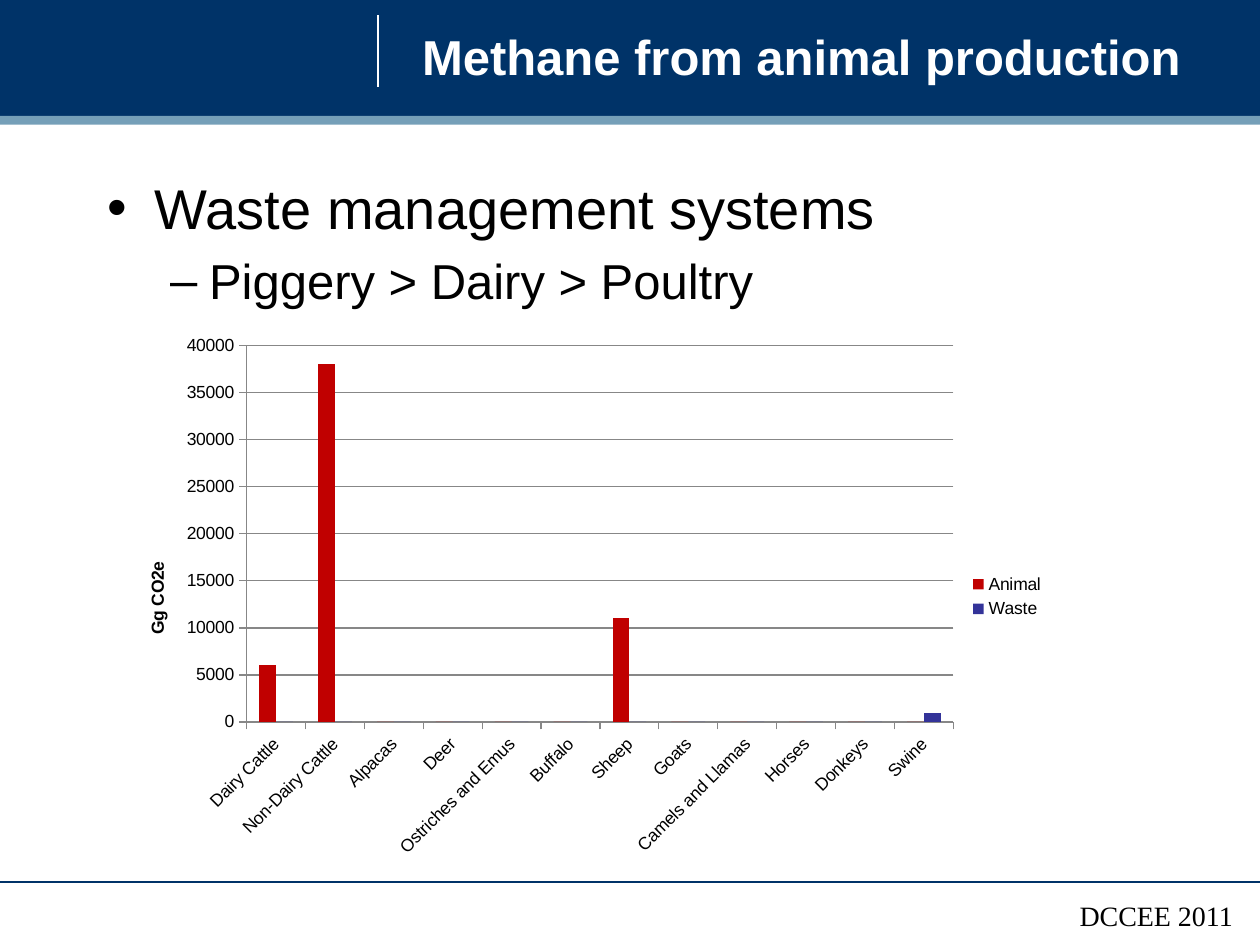
from lxml import etree
from pptx import Presentation
from pptx import util as u
from pptx.chart.data import CategoryChartData
from pptx.dml.color import RGBColor
from pptx.enum import chart as ch, shapes, text
from pptx.oxml import parse_xml
from pptx.oxml.ns import nsdecls, qn

NAVY, STEEL, WHITE, BLACK, GRID = "003368", "759FB8", "FFFFFF", "000000", "878787"


def rgb(value):
    return RGBColor.from_string(value)


class Deck:
    font = "Arial"

    def __init__(self, width, height):
        self.prs = Presentation()
        self.prs.slide_width, self.prs.slide_height = u.Inches(width), u.Inches(height)
        self.w, self.h = width, height
        self.s = self.prs.slides.add_slide(self.prs.slide_layouts[1])

    def box(self, x, y, w, h):
        return [u.Inches(round(v * size, 2))
                for v, size in zip((x, y, w, h), (self.w, self.h) * 2)]

    def place(self, sp, *share):
        sp.left, sp.top, sp.width, sp.height = self.box(*share)

    def run(self, p, words, size, color=BLACK, bold=False, font=None):
        r = p.add_run()
        r.text = words
        r.font.name, r.font.size, r.font.bold = font or self.font, u.Pt(size), bold
        r.font.color.rgb = rgb(color)

    def band(self, y, h, color):
        sp = self.s.shapes.add_shape(shapes.MSO_SHAPE.RECTANGLE, *self.box(0, y, 1, h))
        sp.shadow.inherit = False
        sp.fill.solid()
        sp.fill.fore_color.rgb = rgb(color)
        sp.line.fill.background()
        self.to_back(sp)

    def line(self, x1, y1, x2, y2, color):
        sp = self.s.shapes.add_connector(shapes.MSO_CONNECTOR.STRAIGHT, *self.box(x1, y1, x2, y2))
        sp.line.color.rgb, sp.line.width = rgb(color), u.Pt(0.75)
        etree.SubElement(sp._element.spPr, qn("a:effectLst"))
        self.to_back(sp)

    def to_back(self, sp):
        self.s.shapes._spTree.insert(2, sp._element)

    def title(self, words, *share):
        sp = self.s.shapes.title
        self.place(sp, *share)
        sp.text_frame.vertical_anchor = text.MSO_ANCHOR.MIDDLE
        p = sp.text_frame.paragraphs[0]
        p.alignment = text.PP_ALIGN.LEFT
        self.run(p, words, 28, WHITE, True)

    def bullets(self, items, *share):
        sp = self.s.placeholders[1]
        self.place(sp, *share)
        tf = sp.text_frame
        for i, (level, mark, left, hang, size, words) in enumerate(items):
            p = tf.add_paragraph() if i else tf.paragraphs[0]
            p.level = level
            pPr = p._p.get_or_add_pPr()
            pPr.set("marL", str(u.Inches(left)))
            pPr.set("indent", str(-u.Inches(hang)))
            etree.SubElement(pPr, qn("a:buChar"), char=mark)
            p.space_before = u.Pt(size * 0.2 if i else 0)
            self.run(p, words, size)

    def label(self, words, size, font, *share):
        sp = self.s.shapes.add_textbox(*self.box(*share))
        sp.text_frame.word_wrap = True
        self.run(sp.text_frame.paragraphs[0], words, size, font=font)

    def layout(self, parent, index, x, y, w=None, h=None, inner=False):
        parts = [("xMode", "edge"), ("yMode", "edge"), ("x", x), ("y", y), ("w", w), ("h", h)]
        if inner:
            parts.insert(0, ("layoutTarget", "inner"))
        body = "".join(f'<c:{k} val="{v}"/>' for k, v in parts if v is not None)
        for old in parent.findall(qn("c:layout")):
            parent.remove(old)
        parent.insert(index, parse_xml(
            f'<c:layout {nsdecls("c")}><c:manualLayout>{body}</c:manualLayout></c:layout>'))

    def columns(self, cats, series, unit, *share):
        data = CategoryChartData(number_format="0")
        data.categories = cats
        for name, values, _ in series:
            data.add_series(name, values)
        chart = self.s.shapes.add_chart(
            ch.XL_CHART_TYPE.COLUMN_CLUSTERED, *self.box(*share), data).chart
        chart.font.name, chart.font.size = self.font, u.Pt(10)
        chart.font.color.rgb = rgb(BLACK)
        chart.has_title = False
        chart.has_legend = True
        chart.legend.position = ch.XL_LEGEND_POSITION.RIGHT
        chart.legend.include_in_layout = False
        plot = chart.plots[0]
        plot.vary_by_categories, plot.gap_width, plot.overlap = False, 150, 0
        for ser, (_, _, color) in zip(plot.series, series):
            ser.format.fill.solid()
            ser.format.fill.fore_color.rgb = rgb(color)
        cat, val = chart.category_axis, chart.value_axis
        for axis in (cat, val):
            axis.major_tick_mark = ch.XL_TICK_MARK.OUTSIDE
            axis.format.line.color.rgb = rgb(GRID)
            axis.tick_labels.font.size = u.Pt(10)
        cat._element.txPr.bodyPr.set("rot", str(-45 * 60000))
        val.minimum_scale, val.maximum_scale, val.major_unit = 0, 40000, 5000
        val.major_gridlines.format.line.color.rgb = rgb(GRID)
        self.run(val.axis_title.text_frame.paragraphs[0], unit, 10, bold=True)
        self.layout(val.axis_title._element, 1, 0.03, 0.43)
        self.layout(chart._chartSpace.chart.plotArea, 0, 0.14, 0.04, 0.75, 0.69, True)


def main():
    d = Deck(10, 7.5)
    d.band(0.123, 0.01, STEEL)
    d.line(0, 0.933, 1, 0.933, NAVY)
    d.line(0.3, 0.016, 0.3, 0.092, WHITE)
    d.band(0, 0.123, NAVY)
    d.title("Methane from animal production", 0.325, 0.01, 0.633, 0.1)
    d.bullets([(0, "•", 0.38, 0.38, 32, "Waste management systems"),
               (1, "–", 0.81, 0.31, 28, "Piggery > Dairy > Poultry")],
              0.075, 0.177, 0.85, 0.711)
    cats = ["Dairy Cattle", "Non-Dairy Cattle", "Alpacas", "Deer", "Ostriches and Emus",
            "Buffalo", "Sheep", "Goats", "Camels and Llamas", "Horses", "Donkeys", "Swine"]
    animal = {"Dairy Cattle": 6000, "Non-Dairy Cattle": 38000, "Sheep": 11000}
    waste = {"Swine": 1000}
    d.columns(cats, [("Animal", [animal.get(c, 0) for c in cats], "C00000"),
                     ("Waste", [waste.get(c, 0) for c in cats], "333399")],
              "Gg CO2e", 0.091, 0.343, 0.748, 0.577)
    d.label("DCCEE 2011", 16, "Times New Roman", 0.847, 0.944, 0.15, 0.049)
    d.prs.save("out.pptx")


if __name__ == "__main__":
    main()
